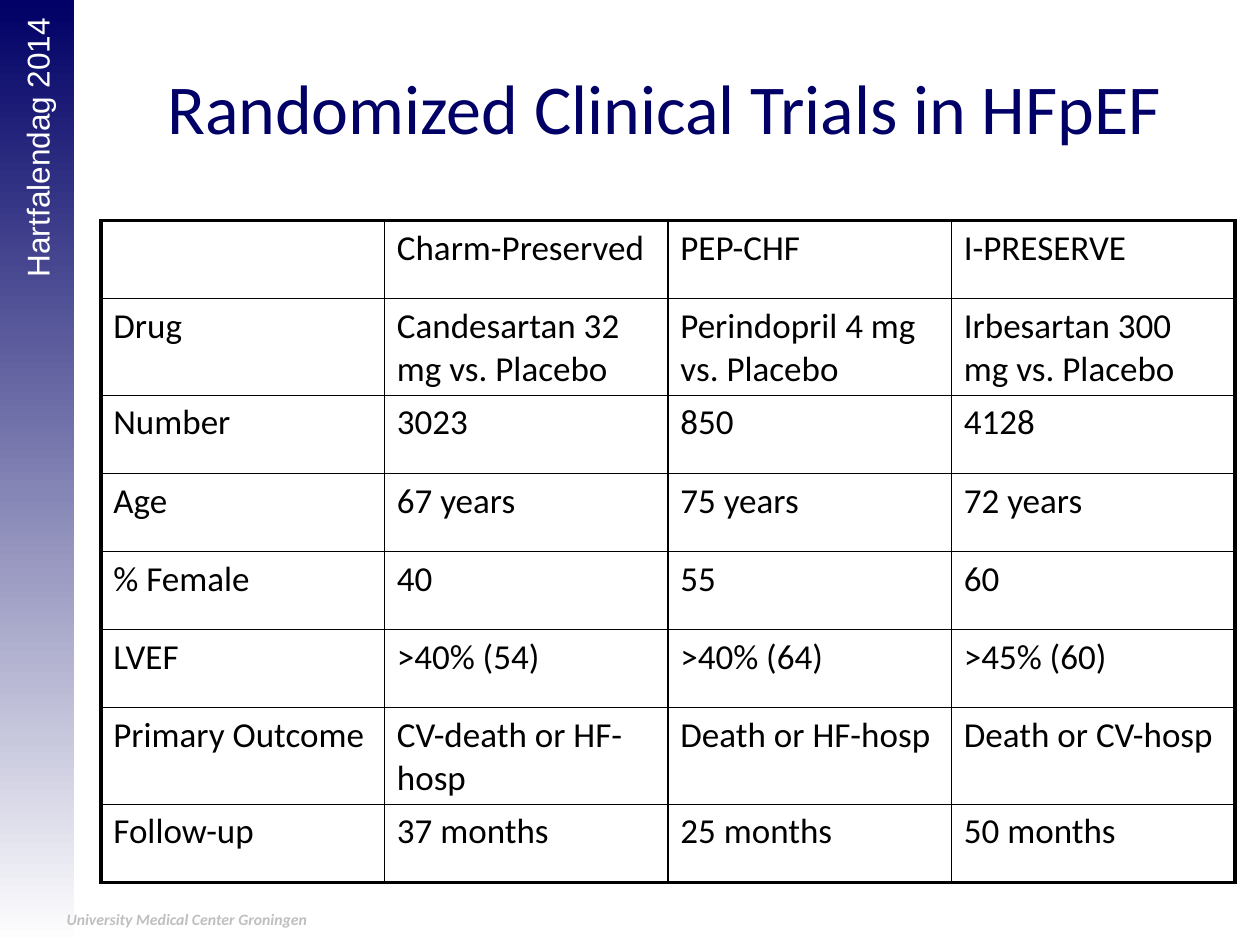
from lxml.etree import SubElement
from pptx import Presentation
from pptx.dml.color import RGBColor
from pptx.enum.shapes import MSO_SHAPE as Preset
from pptx.enum.text import MSO_ANCHOR as Anchor, PP_ALIGN as Align
from pptx.oxml.ns import qn
from pptx.util import Inches, Pt

COLORS = {"navy": "000066", "white": "FFFFFF", "gray": "BFBFBF", "black": "000000"}
TRIALS = [
    ["", "Charm-Preserved", "PEP-CHF", "I-PRESERVE"],
    ["Drug", "Candesartan 32 mg vs. Placebo", "Perindopril 4 mg vs. Placebo",
     "Irbesartan 300 mg vs. Placebo"],
    ["Number", "3023", "850", "4128"],
    ["Age", "67 years", "75 years", "72 years"],
    ["% Female", "40", "55", "60"],
    ["LVEF", ">40% (54)", ">40% (64)", ">45% (60)"],
    ["Primary Outcome", "CV-death or HF-hosp", "Death or HF-hosp", "Death or CV-hosp"],
    ["Follow-up", "37 months", "25 months", "50 months"],
]
INNER, OUTER = 1, 2.25


def color(name):
    """Return the named color."""
    return RGBColor.from_string(COLORS[name])


def write(frame, text, size, shade, font="Calibri", align=Align.LEFT):
    """Fill a text frame with one formatted paragraph and return it."""
    frame.word_wrap = True
    para = frame.paragraphs[0]
    para.text = text
    para.alignment = align
    para.font.name = font
    para.font.size = Pt(size)
    para.font.color.rgb = color(shade)
    return para


def add_sidebar(page):
    """Add the fading band on the left edge."""
    band = page.shapes.add_shape(Preset.RECTANGLE, 0, 0, Inches(0.59), Inches(7.5))
    band.shadow.inherit = False
    band.line.fill.background()
    band.fill.gradient()
    band.fill.gradient_angle = 270
    for stop, shade in zip(band.fill.gradient_stops, ("navy", "white")):
        stop.color.rgb = color(shade)


def add_label(page, place, *style, **options):
    """Add a text box at the given place and return it with its paragraph."""
    box = page.shapes.add_textbox(*map(Inches, place))
    return box, write(box.text_frame, *style, **options)


def set_title(page, text):
    """Place and format the title."""
    title = page.shapes.title
    title.left, title.top, title.width, title.height = map(Inches, (0.58, 0.22, 9.38, 1.25))
    title.text_frame.vertical_anchor = Anchor.MIDDLE
    write(title.text_frame, text, 40, "navy", align=Align.CENTER)


def set_borders(cell, widths):
    """Draw the left, right, top and bottom borders of a cell."""
    properties = cell._tc.get_or_add_tcPr()
    for side, width in zip("LRTB", widths):
        line = SubElement(properties, qn(f"a:ln{side}"), w=str(Pt(width)))
        fill = SubElement(line, qn("a:solidFill"))
        SubElement(fill, qn("a:srgbClr"), val=COLORS["black"])


def add_trial_table(page, rows):
    """Add the trial comparison with a heavier outer frame."""
    last_row, last_column = len(rows) - 1, len(rows[0]) - 1
    table = page.shapes.add_table(len(rows), len(rows[0]), Inches(0.8), Inches(1.75),
                                  Inches(9), Inches(0.62 * len(rows))).table
    table.first_row = table.horz_banding = False
    for r, row in enumerate(rows):
        for c, text in enumerate(row):
            cell = table.cell(r, c)
            edges = (c == 0, c == last_column, r == 0, r == last_row)
            set_borders(cell, [OUTER if edge else INNER for edge in edges])
            cell.fill.background()
            write(cell.text_frame, text, 20, "black")


def main():
    """Build and save the deck."""
    deck = Presentation()
    deck.slide_width, deck.slide_height = Inches(10), Inches(7.5)
    page = deck.slides.add_slide(deck.slide_layouts[5])
    add_sidebar(page)
    event, _ = add_label(page, (-3.33, 3.47, 7.25, 0.4), "Hartfalendag 2014", 18, "white",
                         font="Arial", align=Align.RIGHT)
    event.rotation = 270
    _, footer = add_label(page, (0.43, 7.17, 6.07, 0.52),
                          "University Medical Center Groningen", 9, "gray")
    footer.font.bold = footer.font.italic = True
    set_title(page, "Randomized Clinical Trials in HFpEF")
    add_trial_table(page, TRIALS)
    deck.save("out.pptx")


if __name__ == "__main__":
    main()
